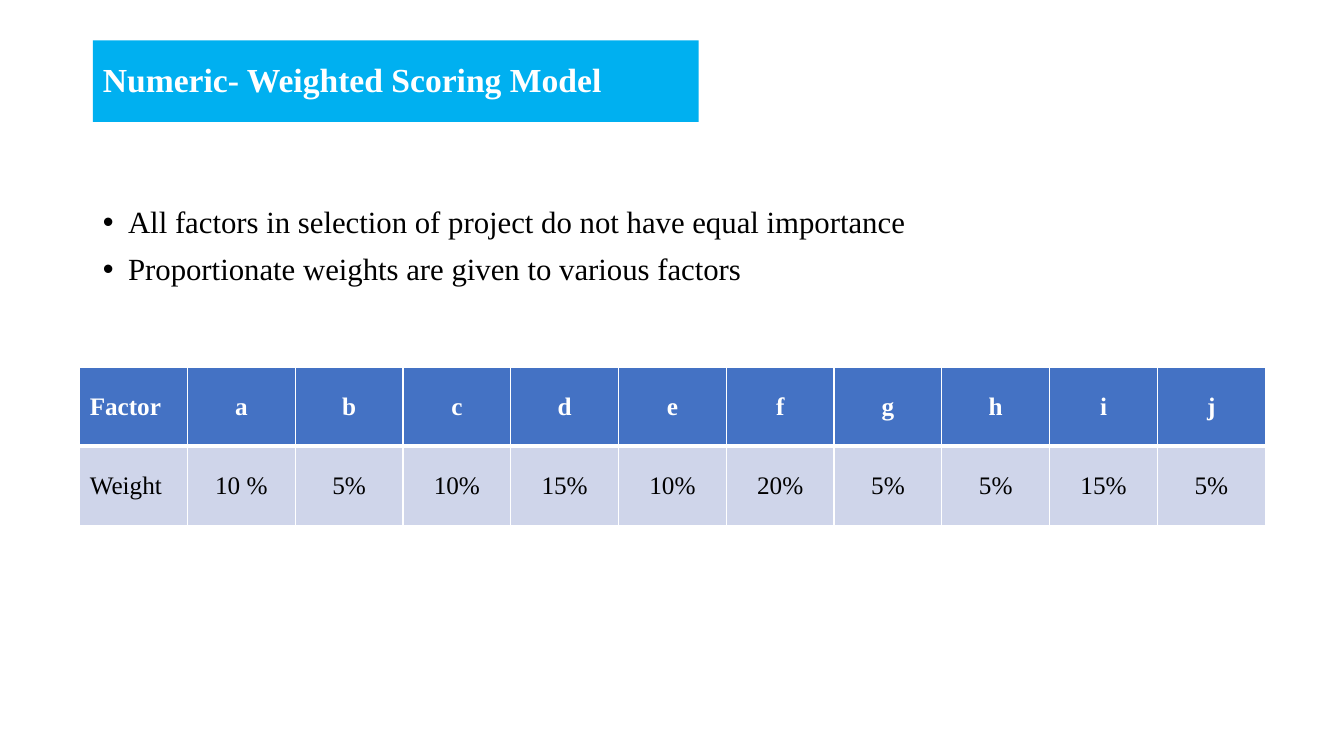
"""Build the slide on the numeric weighted scoring model."""
from lxml import etree
from pptx import Presentation
from pptx import util as u
from pptx.dml import color
from pptx.enum import text
from pptx.oxml import ns

COLORS = {"banner": "00B0F0", "header": "4472C4", "band": "CFD5EA",
          "white": "FFFFFF", "black": "000000"}
FONT = "Times New Roman"


def add_run(paragraph, wording, size, ink, bold=False):
    run = paragraph.add_run()
    run.text = wording
    run.font.name = FONT
    run.font.size = u.Pt(size)
    run.font.bold = bold
    run.font.color.rgb = color.RGBColor.from_string(COLORS[ink])


def add_border(cell, side, points):
    line = etree.SubElement(cell._tc.get_or_add_tcPr(), ns.qn(f"a:ln{side}"),
                            w=str(u.Pt(points)))
    fill = etree.SubElement(line, ns.qn("a:solidFill"))
    etree.SubElement(fill, ns.qn("a:srgbClr"), val=COLORS["white"])


deck = Presentation()
deck.slide_width, deck.slide_height = u.Inches(13.33), u.Inches(7.5)
slide = deck.slides.add_slide(deck.slide_layouts[1])

heading = slide.shapes.title
heading.left, heading.top = u.Inches(0.92), u.Inches(0.4)
heading.width, heading.height = u.Inches(6.01), u.Inches(0.81)
heading.fill.solid()
heading.fill.fore_color.rgb = color.RGBColor.from_string(COLORS["banner"])
heading.text_frame.auto_size = text.MSO_AUTO_SIZE.NONE
heading.text_frame.vertical_anchor = text.MSO_ANCHOR.MIDDLE
heading_line = heading.text_frame.paragraphs[0]
heading_line.alignment = text.PP_ALIGN.LEFT
heading_line.line_spacing = 0.9
add_run(heading_line, "Numeric- Weighted Scoring Model", 24, "white", True)

points = slide.placeholders[1]
points.left, points.top = u.Inches(0.92), u.Inches(2)
points.width, points.height = u.Inches(11.5), u.Inches(4.76)
points.text_frame.auto_size = text.MSO_AUTO_SIZE.NONE
statements = ["All factors in selection of project do not have equal importance",
              "Proportionate weights are given to various factors"]
for index, statement in enumerate(statements):
    if index:
        point = points.text_frame.add_paragraph()
    else:
        point = points.text_frame.paragraphs[0]
    point.line_spacing = 0.9
    point.space_before = u.Pt(10)
    properties = point._p.get_or_add_pPr()
    properties.set("marL", str(u.Inches(0.25)))
    properties.set("indent", str(u.Inches(-0.25)))
    add_run(point, statement, 22, "black")

factors = ["Factor", *"abcdefghij"]
weights = ["Weight", "10 %", "5%", "10%", "15%", "10%", "20%", "5%", "5%", "15%", "5%"]
row_styles = [(factors, "header", "white", True, {"L": 1, "R": 1, "T": 1, "B": 3}),
              (weights, "band", "black", False, {"L": 1, "R": 1, "T": 3, "B": 1})]
scoring = slide.shapes.add_table(
    len(row_styles), len(factors), u.Inches(0.79), u.Inches(3.64),
    u.Inches(11.76), u.Inches(1.57)).table
for row, (entries, fill, ink, bold, borders) in enumerate(row_styles):
    for column, entry in enumerate(entries):
        cell = scoring.cell(row, column)
        for side, width in borders.items():
            add_border(cell, side, width)
        cell.fill.solid()
        cell.fill.fore_color.rgb = color.RGBColor.from_string(COLORS[fill])
        cell.vertical_anchor = text.MSO_ANCHOR.MIDDLE
        label = cell.text_frame.paragraphs[0]
        label.alignment = text.PP_ALIGN.CENTER if column else text.PP_ALIGN.LEFT
        add_run(label, entry, 18, ink, bold)

deck.save("out.pptx")
